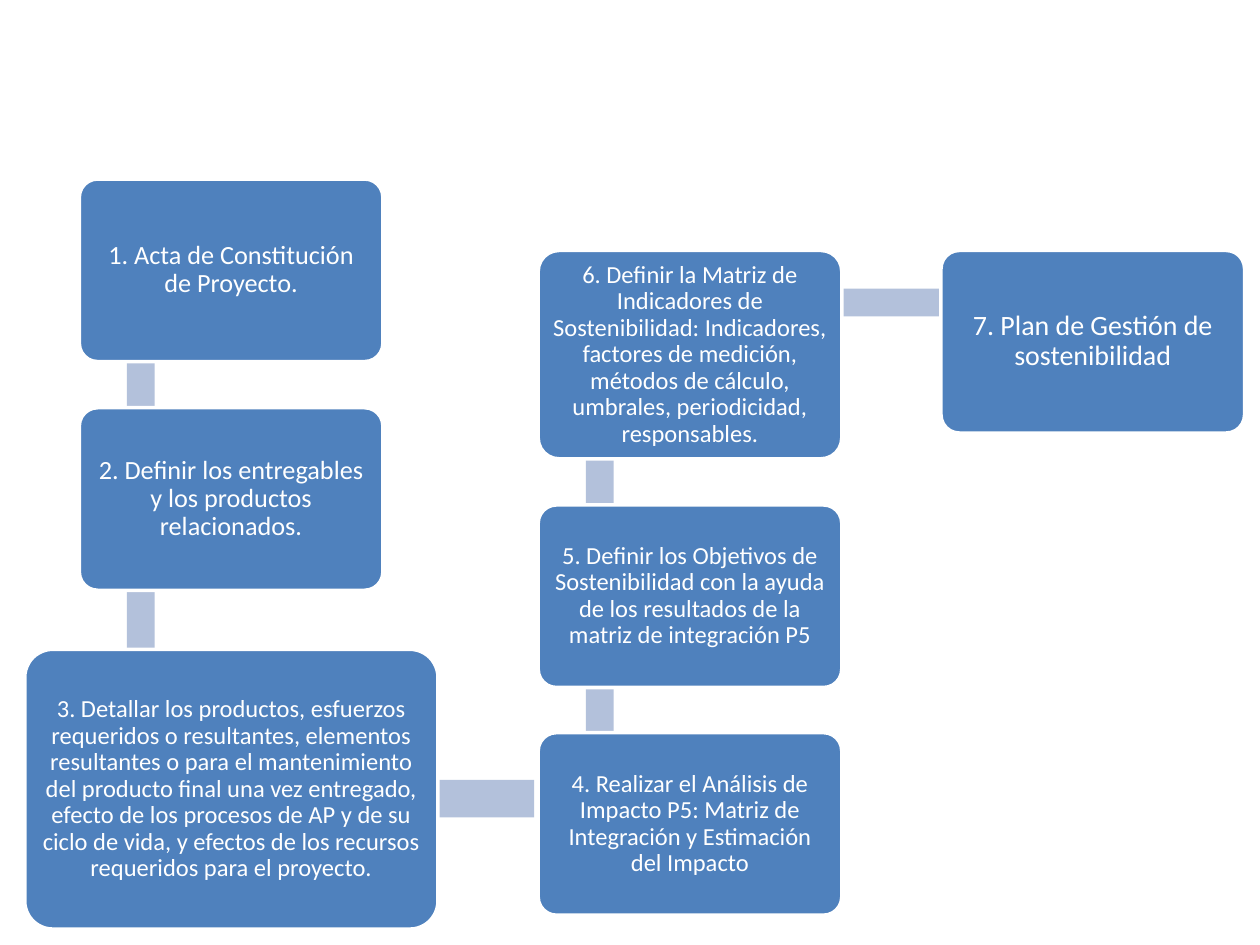
from pptx import Presentation
from pptx.dml.color import RGBColor
from pptx.enum.shapes import MSO_SHAPE
from pptx.enum.text import MSO_ANCHOR, PP_ALIGN
from pptx.util import Cm, Pt

RECT = MSO_SHAPE.RECTANGLE
ROUNDED = MSO_SHAPE.ROUNDED_RECTANGLE
MIDDLE = MSO_ANCHOR.MIDDLE
CENTER = PP_ALIGN.CENTER

STEP_W, STEP_H = 6.12, 3.68
COL_1, COL_2, COL_3 = 1.6, 10.85, 18.97
TOP_ROW = 5.05
BAR = 0.56
BAR_1, BAR_2 = COL_1 + 0.96, COL_2 + 0.96

LINKS = [
    (BAR_1, 4.52, BAR, 4.57),
    (BAR_1, 9.12, BAR, 5.84),
    (5.72, 15.72, 5.05, 0.76),
    (BAR_2, 11.1, BAR, 4.57),
    (BAR_2, 6.25, BAR, 4.83),
    (12.07, 5.82, 8.15, BAR),
]

STEPS = [
    ("1. Acta de Constitución de Proyecto.",
     (COL_1, 3.61, STEP_W, STEP_H), 15),
    ("2. Definir los entregables y los productos relacionados.",
     (COL_1, 8.22, STEP_W, STEP_H), 15),
    ("3. Detallar los productos, esfuerzos requeridos o resultantes, elementos "
     "resultantes o para el mantenimiento del producto final una vez entregado, "
     "efecto de los procesos de AP y de su ciclo de vida, y efectos de los "
     "recursos requeridos para el proyecto.",
     (0.5, 13.09, 8.33, 5.64), 14),
    ("4. Realizar el Análisis de Impacto P5: Matriz de Integración y Estimación "
     "del Impacto",
     (COL_2, 14.77, STEP_W, STEP_H), 14),
    ("5. Definir los Objetivos de Sostenibilidad con la ayuda de los resultados "
     "de la matriz de integración P5",
     (COL_2, 10.18, STEP_W, STEP_H), 14),
    ("6. Definir la Matriz de Indicadores de Sostenibilidad: Indicadores, "
     "factores de medición, métodos de cálculo, umbrales, periodicidad, "
     "responsables.",
     (COL_2, TOP_ROW, STEP_W, 4.2), 14),
    ("7. Plan de Gestión de sostenibilidad",
     (COL_3, TOP_ROW, STEP_W, STEP_H), 16),
]


def color(value):
    return RGBColor.from_string(value)


def write(tf, text, size, font="Calibri", fill="FFFFFF", spacing=0.9, inset=0.15):
    tf.word_wrap = True
    tf.vertical_anchor = MIDDLE
    tf.margin_left = tf.margin_right = Cm(inset)
    tf.margin_top = tf.margin_bottom = Cm(inset)
    p = tf.paragraphs[0]
    p.alignment = CENTER
    p.line_spacing = spacing
    r = p.add_run()
    r.text = text
    r.font.name = font
    r.font.size = Pt(size)
    r.font.color.rgb = color(fill)


class Flow:
    step_fill = "4F81BD"
    link_fill = "B3C1DB"
    edge = "FFFFFF"

    def __init__(self, s):
        self.s = s

    def shape(self, kind, box, fill):
        sp = self.s.shapes.add_shape(kind, *map(Cm, box))
        sp.shadow.inherit = False
        sp.fill.solid()
        sp.fill.fore_color.rgb = color(fill)
        return sp

    def link(self, box):
        sp = self.shape(RECT, box, self.link_fill)
        sp.line.fill.background()

    def step(self, text, box, size):
        sp = self.shape(ROUNDED, box, self.step_fill)
        sp.adjustments[0] = 0.1
        sp.line.color.rgb = color(self.edge)
        sp.line.width = Pt(2)
        write(sp.text_frame, text, size)


def main():
    prs = Presentation()
    prs.slide_width, prs.slide_height = Cm(25.4), Cm(19.05)
    flow = Flow(prs.slides.add_slide(prs.slide_layouts[6]))
    for box in LINKS:
        flow.link(box)
    for text, box, size in STEPS:
        flow.step(text, box, size)
    prs.save("out.pptx")


if __name__ == "__main__":
    main()
